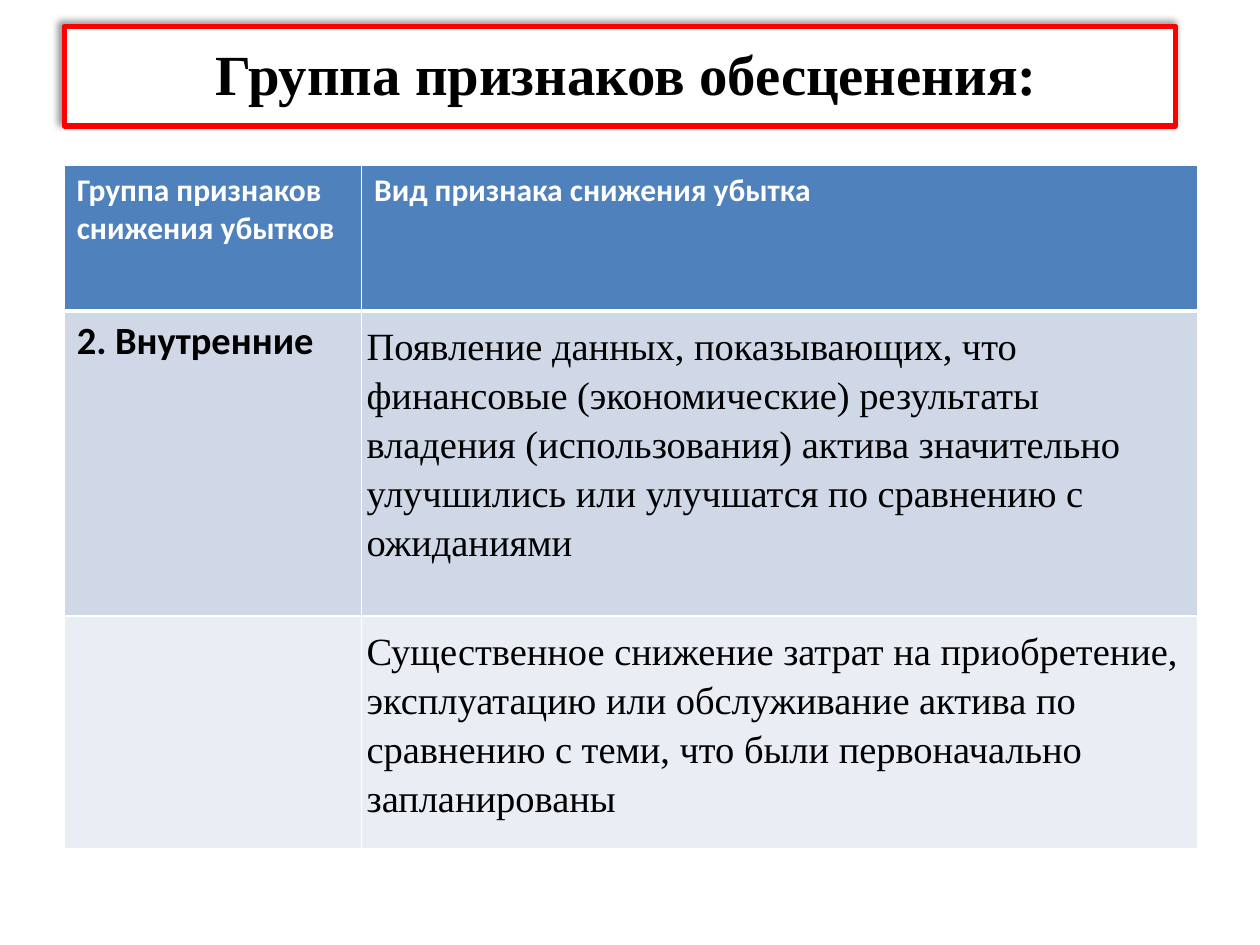
from dataclasses import dataclass

from lxml.etree import SubElement
from pptx import Presentation
from pptx.dml.color import RGBColor as RGB
from pptx.enum.shapes import MSO_SHAPE as Preset
from pptx.enum.text import MSO_ANCHOR as Anchor, PP_ALIGN as Align
from pptx.oxml.ns import qn
from pptx.util import Inches, Pt


@dataclass(frozen=True)
class Theme:
    """Colours, fonts and type sizes of the slide."""
    white: str = "FFFFFF"
    black: str = "000000"
    frame: str = "FF0000"
    header: str = "4F81BD"
    band_dark: str = "D0D8E8"
    band_light: str = "E9EDF4"
    serif: str = "Times New Roman"
    sans: str = "Calibri"
    title_size: float = 32.4
    header_size: float = 18
    body_size: float = 22


THEME = Theme()
HEADINGS = ("Группа признаков\nснижения убытков", "Вид признака снижения убытка")
SIGNS = (
    ("2. Внутренние",
     "Появление данных, показывающих, что финансовые (экономические) результаты "
     "владения (использования) актива значительно улучшились или улучшатся "
     "по сравнению с ожиданиями"),
    ("",
     "Существенное снижение затрат на приобретение, эксплуатацию или обслуживание "
     "актива по сравнению с теми, что были первоначально запланированы"),
)


def write(frame, text, font, size, colour, bold):
    """Put text in a frame and format all of its runs."""
    frame.text = text
    for paragraph in frame.paragraphs:
        for run in paragraph.runs:
            run.font.name = font
            run.font.size = Pt(size)
            run.font.bold = bold
            run.font.color.rgb = RGB.from_string(colour)


def add_shadow(shape, colour, opacity, blur, distance, angle):
    """Give a shape an outer shadow."""
    shape.shadow.inherit = False
    effects = shape.element.spPr.find(qn("a:effectLst"))
    shadow = SubElement(effects, qn("a:outerShdw"), blurRad=str(Pt(blur)),
                        dist=str(Pt(distance)), dir=str(angle * 60000), rotWithShape="0")
    tint = SubElement(shadow, qn("a:srgbClr"), val=colour)
    SubElement(tint, qn("a:alpha"), val=str(opacity * 1000))


def style_cell(cell, fill, bottom=1, top=1):
    """Fill a cell and draw its white borders."""
    properties = cell._tc.get_or_add_tcPr()
    for side, width in (("L", 1), ("R", 1), ("T", top), ("B", bottom)):
        border = SubElement(properties, qn(f"a:ln{side}"), w=str(Pt(width)))
        paint = SubElement(border, qn("a:solidFill"))
        SubElement(paint, qn("a:srgbClr"), val=THEME.white)
    cell.fill.solid()
    cell.fill.fore_color.rgb = RGB.from_string(fill)


def add_title(slide, left, top, width, height):
    """Place the framed title in the given box."""
    title = slide.shapes.add_shape(Preset.RECTANGLE, left, top, width, height)
    title.fill.solid()
    title.fill.fore_color.rgb = RGB.from_string(THEME.white)
    title.line.color.rgb = RGB.from_string(THEME.frame)
    title.line.width = Pt(3)
    add_shadow(title, THEME.black, opacity=40, blur=4, distance=3, angle=225)
    frame = title.text_frame
    frame.word_wrap = True
    frame.vertical_anchor = Anchor.MIDDLE
    frame.margin_left, frame.margin_right = Inches(0.2), Inches(0.1)
    frame.margin_top, frame.margin_bottom = Inches(0.04), Inches(0.1)
    write(frame, "Группа признаков обесценения:", THEME.serif, THEME.title_size, THEME.black, True)
    frame.paragraphs[0].alignment = Align.CENTER


def add_signs_table(slide, left, top, width, height):
    """Place the table of impairment signs in the given box."""
    table = slide.shapes.add_table(1 + len(SIGNS), len(HEADINGS), left, top, width, height).table
    table.horz_banding = False
    group_width, header_height, first_height = Inches(2.36), Inches(1.16), Inches(2.42)
    for column, size in zip(table.columns, (group_width, width - group_width)):
        column.width = size
    heights = (header_height, first_height, height - header_height - first_height)
    for row, size in zip(table.rows, heights):
        row.height = size

    for column, heading in enumerate(HEADINGS):
        cell = table.cell(0, column)
        style_cell(cell, THEME.header, bottom=3)
        write(cell.text_frame, heading, THEME.sans, THEME.header_size, THEME.white, True)

    bands = (THEME.band_dark, THEME.band_light)
    for row, ((group, sign), band) in enumerate(zip(SIGNS, bands), start=1):
        group_cell, sign_cell = table.cell(row, 0), table.cell(row, 1)
        for cell in (group_cell, sign_cell):
            style_cell(cell, band, top=3 if row == 1 else 1)
        write(group_cell.text_frame, group, THEME.sans, THEME.body_size, THEME.black, True)
        write(sign_cell.text_frame, sign, THEME.serif, THEME.body_size, THEME.black, False)
        sign_cell.text_frame.paragraphs[0].line_spacing = 1.15
        sign_cell.margin_left = sign_cell.margin_right = Inches(0.04)
        sign_cell.margin_top = sign_cell.margin_bottom = Inches(0.07)


def main():
    """Build the slide and save it."""
    deck = Presentation()
    deck.slide_width, deck.slide_height = Inches(10), Inches(7.5)
    slide = deck.slides.add_slide(deck.slide_layouts[6])
    left = Inches(0.51)
    add_title(slide, left, Inches(0.21), Inches(8.82), Inches(0.79))
    add_signs_table(slide, left, Inches(1.31), Inches(9), Inches(5.43))
    deck.save("out.pptx")


if __name__ == "__main__":
    main()
